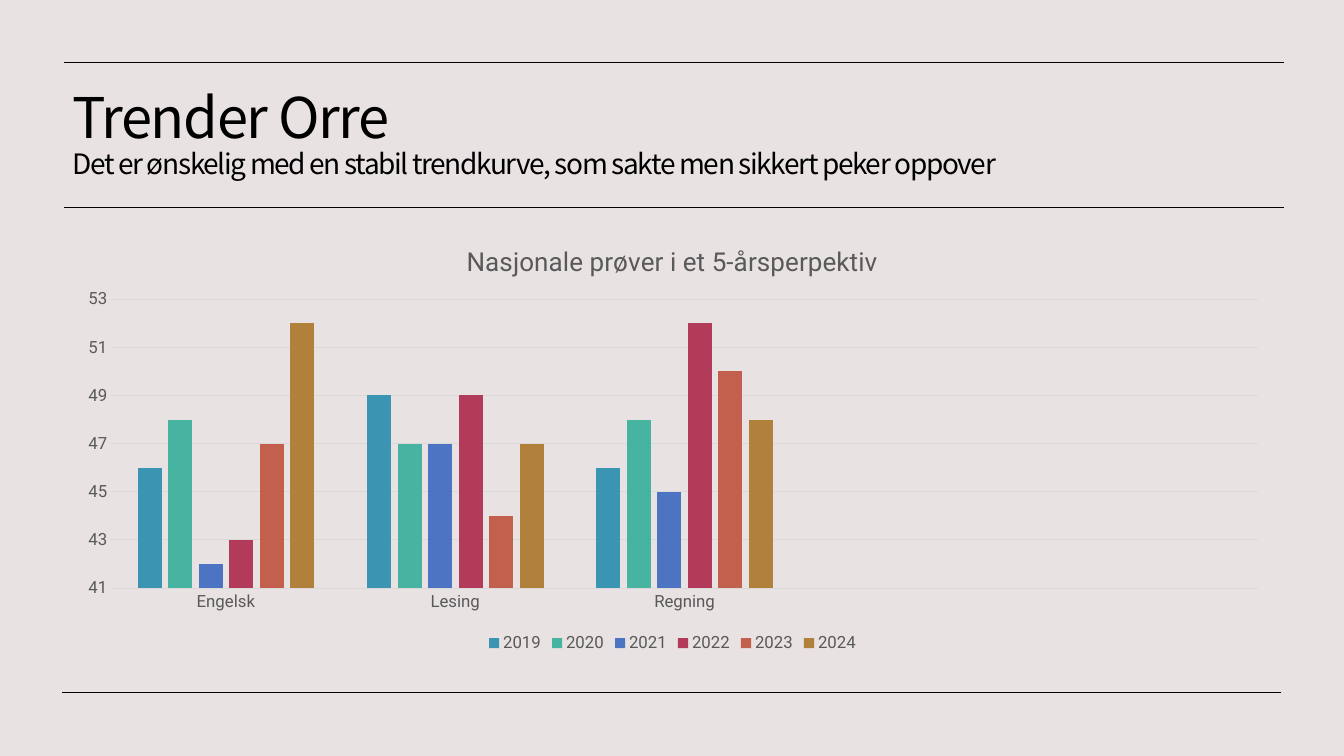
from lxml import etree
from pptx import Presentation
from pptx.chart.data import CategoryChartData
from pptx.dml.color import RGBColor
from pptx.enum.chart import XL_CHART_TYPE as ChartType
from pptx.enum.chart import XL_LEGEND_POSITION as LegendPosition
from pptx.enum.chart import XL_TICK_MARK as TickMark
from pptx.enum.shapes import MSO_CONNECTOR as Connector
from pptx.enum.text import MSO_ANCHOR as Anchor
from pptx.oxml import parse_xml
from pptx.oxml.ns import nsdecls, qn
from pptx.util import Inches, Pt

BACKGROUND = RGBColor(0xE8, 0xE3, 0xE2)
BLACK = RGBColor(0, 0, 0)
GREY = RGBColor(0x59, 0x59, 0x59)
GRID = RGBColor(0xD9, 0xD9, 0xD9)
TITLE_FONT = "Noto Sans CJK KR"
CHART_FONT = "Roboto"

# Results per year: colour, then Engelsk, Lesing, Regning
RESULTS = {
    "2019": (RGBColor(0x3B, 0x94, 0xB1), (46, 49, 46)),
    "2020": (RGBColor(0x46, 0xB4, 0xA1), (48, 47, 48)),
    "2021": (RGBColor(0x4D, 0x74, 0xC3), (42, 47, 45)),
    "2022": (RGBColor(0xB1, 0x3B, 0x58), (43, 49, 52)),
    "2023": (RGBColor(0xC3, 0x60, 0x4D), (47, 44, 50)),
    "2024": (RGBColor(0xB1, 0x80, 0x3B), (52, 47, 48)),
}


def style_font(font, size, color, name):
    font.size = Pt(size)
    font.color.rgb = color
    font.name = name
    font.bold = False


deck = Presentation()
deck.slide_width, deck.slide_height = Inches(13.33), Inches(7.5)
page = deck.slides.add_slide(deck.slide_layouts[6])
page.background.fill.solid()
page.background.fill.fore_color.rgb = BACKGROUND

# Horizontal rules
for left, right, top in ((0.62, 12.71, 6.87), (0.63, 12.73, 2.06), (0.63, 12.73, 0.62)):
    rule = page.shapes.add_connector(
        Connector.STRAIGHT, Inches(right), Inches(top), Inches(left), Inches(top))
    rule.line.color.rgb = BLACK
    rule.line.width = Pt(0.5)
    etree.SubElement(rule._element.spPr, qn("a:effectLst"))

# Heading with subtitle
box = page.shapes.add_textbox(Inches(0.62), Inches(0.75), Inches(12.08), Inches(1.19))
box.text_frame.word_wrap = True
box.text_frame.vertical_anchor = Anchor.MIDDLE
para = box.text_frame.paragraphs[0]
para.line_spacing = 0.9
for text, size in (
    ("Trender Orre", 40),
    ("Det er ønskelig med en stabil trendkurve, som sakte men sikkert peker oppover", 20),
):
    if para.runs:
        para.add_line_break()
    span = para.add_run()
    span.text = text
    style_font(span.font, size, BLACK, TITLE_FONT)
    span.font._element.set("spc", "-100")

# Chart: three subjects and two empty category slots
chart_data = CategoryChartData()
chart_data.categories = ["Engelsk", "Lesing", "Regning", "", ""]
for year, (color, scores) in RESULTS.items():
    chart_data.add_series(year, scores + (None, None))
chart = page.shapes.add_chart(
    ChartType.COLUMN_CLUSTERED, Inches(0.62), Inches(2.24),
    Inches(12.1), Inches(4.28), chart_data).chart
style_font(chart.font, 10, BLACK, CHART_FONT)

# Chart title and legend
chart.has_title = True
span = chart.chart_title.text_frame.paragraphs[0].add_run()
span.text = "Nasjonale prøver i et 5-årsperpektiv"
style_font(span.font, 18.6, GREY, CHART_FONT)
chart.has_legend = True
chart.legend.position = LegendPosition.BOTTOM
chart.legend.include_in_layout = False
style_font(chart.legend.font, 12, GREY, CHART_FONT)

# Columns
plot = chart.plots[0]
plot.gap_width = 219
plot.overlap = -27
plot.vary_by_categories = False
for series in plot.series:
    series.format.fill.solid()
    series.format.fill.fore_color.rgb = RESULTS[series.name][0]

# Axes
for axis in (chart.category_axis, chart.value_axis):
    axis.major_tick_mark = axis.minor_tick_mark = TickMark.NONE
    style_font(axis.tick_labels.font, 12, GREY, CHART_FONT)
scale = chart.value_axis
scale.minimum_scale, scale.maximum_scale, scale.major_unit = 41, 53, 2
scale.format.line.fill.background()
for line in (chart.category_axis.format.line, scale.major_gridlines.format.line):
    line.color.rgb = GRID
    line.width = Pt(0.75)

# Plot area as shares of the chart
plot_area = chart._chartSpace.chart.plotArea
for old_layout in plot_area.findall(qn("c:layout")):
    plot_area.remove(old_layout)
shares = "".join(
    f'<c:{key} val="{share}"/>'
    for key, share in (("x", 0.04), ("y", 0.17), ("w", 0.94), ("h", 0.67)))
plot_area.insert(0, parse_xml(
    f'<c:layout {nsdecls("c")}><c:manualLayout><c:layoutTarget val="inner"/>'
    f'<c:xMode val="edge"/><c:yMode val="edge"/>{shares}</c:manualLayout></c:layout>'))

deck.save("out.pptx")
